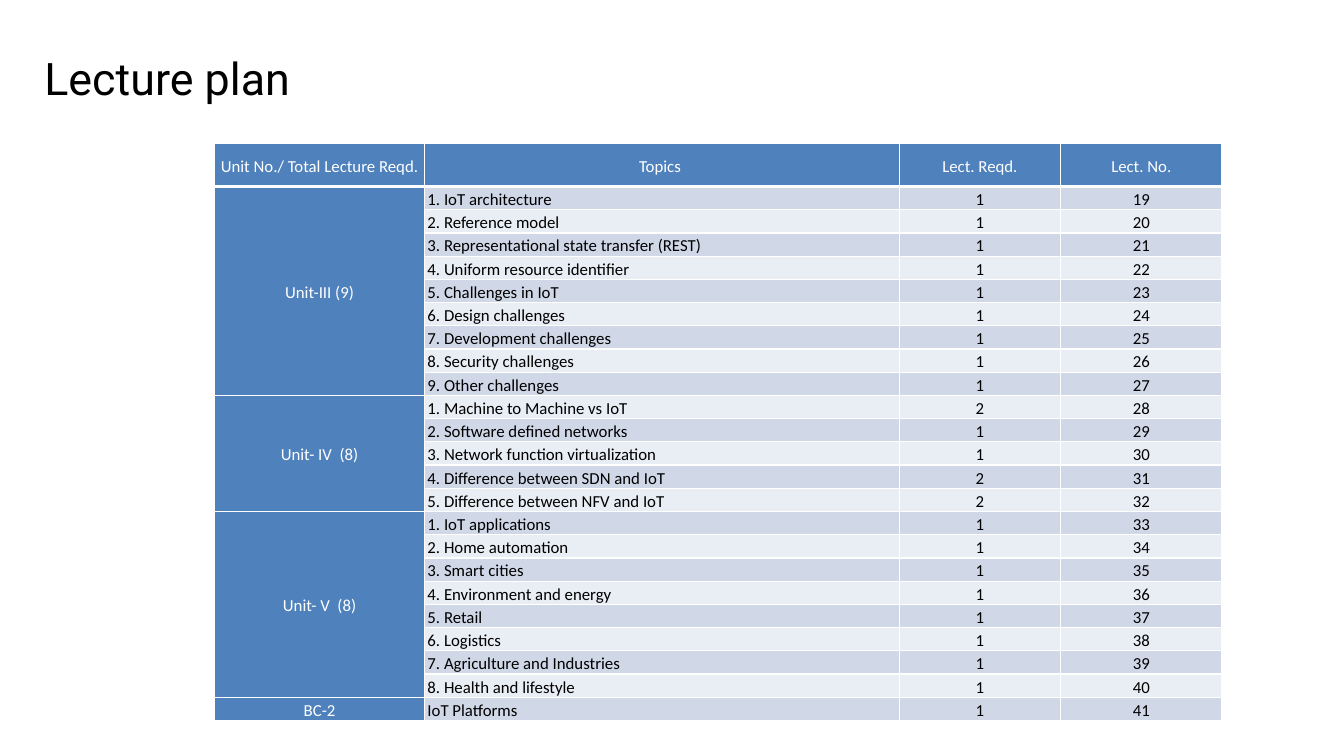
"""Build the lecture plan slide with its table of units and topics."""
from dataclasses import dataclass
from itertools import count

from lxml import etree
from pptx import Presentation
from pptx import util as u
from pptx.dml.color import RGBColor
from pptx.enum import text
from pptx.oxml import ns

COLOURS = {"black": "000000", "white": "FFFFFF", "header": "4F81BD",
           "band_dark": "D0D8E8", "band_light": "E9EDF4"}
COLUMN_WIDTHS = (2.08, 4.71, 1.6, 1.6)
HEADINGS = ("Unit No./ Total Lecture Reqd.", "Topics ", "Lect. Reqd.", "Lect. No.")
HEADER_HEIGHT, ROW_HEIGHT = 0.43, 0.22
FIRST_LECTURE = 19


@dataclass(frozen=True)
class Topic:
    """A topic and the number of lectures it requires."""
    name: str
    lectures: int = 1


@dataclass(frozen=True)
class Unit:
    """A unit label with its topics."""
    label: str
    topics: tuple[Topic, ...]
    numbered: bool = True


UNITS = (
    Unit("Unit-III (9)", (
        Topic("IoT architecture"), Topic("Reference model"),
        Topic("Representational state transfer (REST)"),
        Topic("Uniform resource identifier"), Topic("Challenges in IoT"),
        Topic("Design challenges"), Topic("Development challenges"),
        Topic("Security challenges"), Topic("Other challenges"))),
    Unit("Unit- IV  (8)", (
        Topic("Machine to Machine vs IoT", 2), Topic("Software defined networks"),
        Topic("Network function virtualization"),
        Topic("Difference between SDN and IoT", 2),
        Topic("Difference between NFV and IoT", 2))),
    Unit("Unit- V  (8)", (
        Topic("IoT applications"), Topic("Home automation"), Topic("Smart cities"),
        Topic("Environment and energy"), Topic("Retail"), Topic("Logistics"),
        Topic("Agriculture and Industries"), Topic("Health and lifestyle"))),
    Unit("BC-2", (Topic("IoT Platforms"),), numbered=False),
)


def write(frame, words: str, *, size: float = 12, font: str = "Calibri",
          colour: str = "black", align=text.PP_ALIGN.CENTER, spacing: float = 1.15) -> None:
    """Write one formatted paragraph into a text frame."""
    para = frame.paragraphs[0]
    para.alignment = align
    para.line_spacing = spacing
    span = para.add_run()
    span.text = words
    span.font.size = u.Pt(size)
    span.font.name = font
    span.font.bold = False
    span.font.color.rgb = RGBColor.from_string(COLOURS[colour])


def style_cell(cell, fill: str, bottom: float = 1) -> None:
    """Set the fill, margins, anchor and white borders of a cell."""
    cell.fill.solid()
    cell.fill.fore_color.rgb = RGBColor.from_string(COLOURS[fill])
    cell.vertical_anchor = text.MSO_ANCHOR.MIDDLE
    cell.margin_left = cell.margin_right = u.Inches(0.03)
    cell.margin_top = cell.margin_bottom = 0
    properties = cell._tc.get_or_add_tcPr()
    borders = (("a:lnL", 1), ("a:lnR", 1), ("a:lnT", 1), ("a:lnB", bottom))
    for place, (side, points) in enumerate(borders):
        line = etree.Element(ns.qn(side), w=str(u.Pt(points)))
        solid = etree.SubElement(line, ns.qn("a:solidFill"))
        etree.SubElement(solid, ns.qn("a:srgbClr"), val=COLOURS["white"])
        properties.insert(place, line)


def add_title(page, words: str) -> None:
    """Place and format the title."""
    box = page.shapes.title
    box.left, box.top, box.width, box.height = map(u.Inches, (0.44, 0.5, 12.67, 0.54))
    frame = box.text_frame
    frame.margin_left = frame.margin_right = frame.margin_top = frame.margin_bottom = 0
    frame.auto_size = text.MSO_AUTO_SIZE.SHAPE_TO_FIT_TEXT
    frame.vertical_anchor = text.MSO_ANCHOR.TOP
    write(frame, words, size=32, font="Roboto", align=text.PP_ALIGN.LEFT, spacing=1.0)


def fill_units(table) -> None:
    """Write every unit, topic and lecture number below the header."""
    rows = count(1)
    for unit in UNITS:
        for number, topic in enumerate(unit.topics, 1):
            row = next(rows)
            band = "band_dark" if row % 2 else "band_light"
            for column in range(len(COLUMN_WIDTHS)):
                style_cell(table.cell(row, column), band if column else "header")
            name = f"{number}. {topic.name}" if unit.numbered else topic.name
            write(table.cell(row, 1).text_frame, name, align=text.PP_ALIGN.LEFT)
            write(table.cell(row, 2).text_frame, str(topic.lectures))
            write(table.cell(row, 3).text_frame, str(FIRST_LECTURE + row - 1))
        first = row - len(unit.topics) + 1
        if first < row:
            table.cell(first, 0).merge(table.cell(row, 0))
        write(table.cell(first, 0).text_frame, unit.label, colour="white")


def add_plan(page) -> None:
    """Add the lecture plan table."""
    topic_count = sum(len(unit.topics) for unit in UNITS)
    height = HEADER_HEIGHT + ROW_HEIGHT * topic_count
    table = page.shapes.add_table(
        topic_count + 1, len(COLUMN_WIDTHS), u.Inches(2.13), u.Inches(1.42),
        u.Inches(sum(COLUMN_WIDTHS)), u.Inches(height)).table
    for column, width in zip(table.columns, COLUMN_WIDTHS):
        column.width = u.Inches(width)
    for index, row in enumerate(table.rows):
        row.height = u.Inches(ROW_HEIGHT if index else HEADER_HEIGHT)
    for column, heading in enumerate(HEADINGS):
        cell = table.cell(0, column)
        style_cell(cell, "header", bottom=3)
        write(cell.text_frame, heading, colour="white")
    fill_units(table)


def main() -> None:
    """Create and save the deck."""
    deck = Presentation()
    deck.slide_width, deck.slide_height = u.Inches(13.33), u.Inches(7.5)
    page = deck.slides.add_slide(deck.slide_layouts[5])
    add_title(page, "Lecture plan")
    add_plan(page)
    deck.save("out.pptx")


if __name__ == "__main__":
    main()
